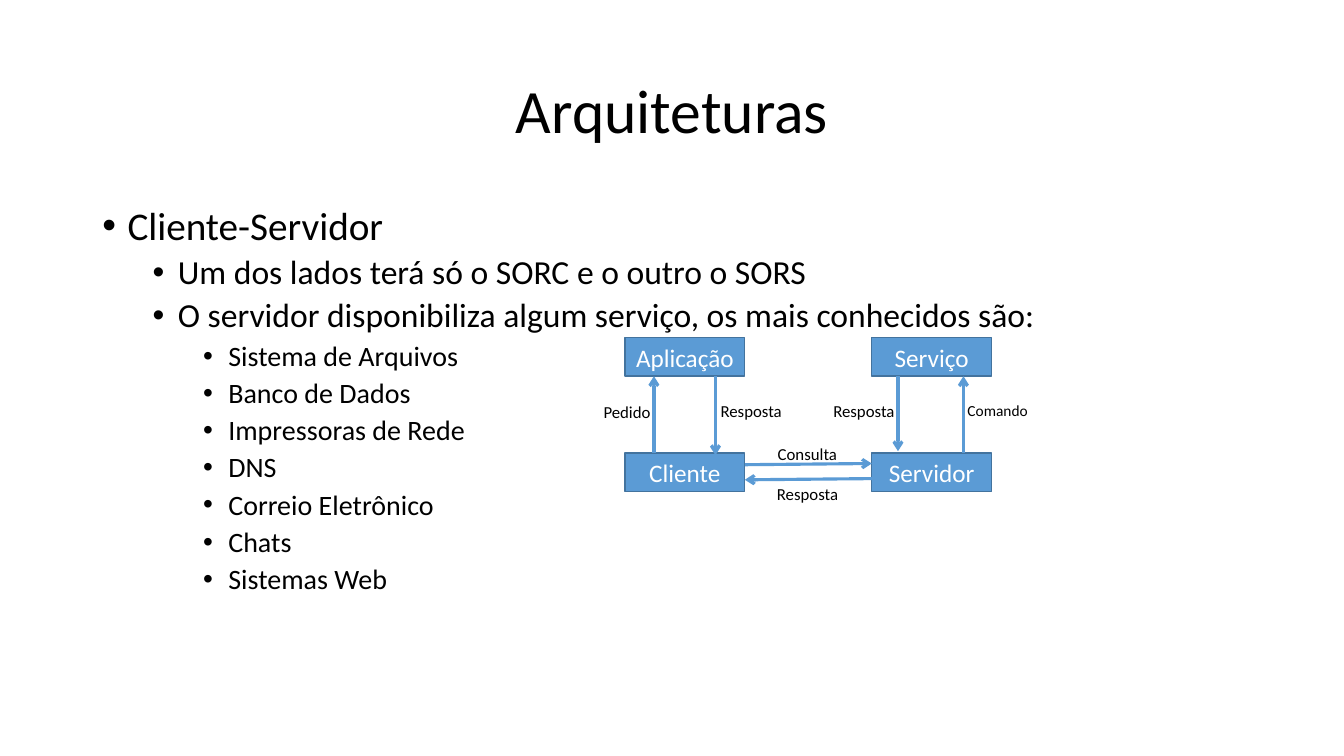
import pptx
import pptx.dml.color
import pptx.enum.shapes
import pptx.enum.text
import pptx.oxml.ns
import pptx.util
from lxml import etree

Cm = pptx.util.Cm
Pt = pptx.util.Pt
ALIGN = pptx.enum.text.PP_ALIGN
ANCHOR = pptx.enum.text.MSO_ANCHOR

COLORS = {"text": "000000", "box": "5B9BD5", "border": "43739E", "box_text": "FFFFFF"}
FONT = "Calibri"

LEVEL_SIZES = [28, 24, 20]
TOPICS = [
    (0, "Cliente-Servidor"),
    (1, "Um dos lados terá só o SORC e o outro o SORS"),
    (1, "O servidor disponibiliza algum serviço, os mais conhecidos são:"),
    (2, "Sistema de Arquivos"),
    (2, "Banco de Dados"),
    (2, "Impressoras de Rede"),
    (2, "DNS"),
    (2, "Correio Eletrônico"),
    (2, "Chats"),
    (2, "Sistemas Web"),
]

BOX_WIDTH, BOX_HEIGHT = 3.02, 0.97
CLIENT_LEFT, SERVER_LEFT = 15.75, 21.97
UPPER_TOP, LOWER_TOP = 8.51, 11.42
UPPER_BOTTOM = UPPER_TOP + BOX_HEIGHT
CLIENT_RIGHT = CLIENT_LEFT + BOX_WIDTH

BOXES = [
    ("Aplicação", CLIENT_LEFT, UPPER_TOP),
    ("Cliente", CLIENT_LEFT, LOWER_TOP),
    ("Servidor", SERVER_LEFT, LOWER_TOP),
    ("Serviço", SERVER_LEFT, UPPER_TOP),
]
ARROWS = [
    (16.48, LOWER_TOP, 16.48, UPPER_BOTTOM),
    (24.28, LOWER_TOP, 24.28, UPPER_BOTTOM),
    (SERVER_LEFT, 12.06, CLIENT_RIGHT, 12.09),
    (18.03, UPPER_BOTTOM, 18.03, LOWER_TOP + 0.05),
    (22.63, UPPER_BOTTOM, 22.63, LOWER_TOP - 0.05),
    (CLIENT_RIGHT, 11.71, SERVER_LEFT, 11.68),
]
LABELS = [
    ("Pedido", 14.96, 10.01, 1.7, 12),
    ("Resposta", 17.91, 9.98, 2.08, 12),
    ("Consulta", 19.35, 11.05, 2.03, 12),
    ("Resposta", 19.33, 12.07, 2.08, 12),
    ("Comando", 24.13, 9.98, 2.03, 11),
    ("Resposta", 20.75, 9.98, 2.08, 12),
]


def color(name):
    return pptx.dml.color.RGBColor.from_string(COLORS[name])


def add_run(paragraph, text, size, color_name="text"):
    run = paragraph.add_run()
    run.text = text
    run.font.name = FONT
    run.font.size = Pt(size)
    run.font.color.rgb = color(color_name)


def add_text_frame(slide, left, top, width, height, wrap=True):
    shape = slide.shapes.add_textbox(Cm(left), Cm(top), Cm(width), Cm(height))
    shape.text_frame.word_wrap = wrap
    return shape.text_frame


def add_title(slide, text):
    frame = add_text_frame(slide, 2.33, 1.01, 29.21, 3.68)
    frame.vertical_anchor = ANCHOR.MIDDLE
    paragraph = frame.paragraphs[0]
    paragraph.alignment = ALIGN.CENTER
    paragraph.line_spacing = 0.9
    add_run(paragraph, text, 44)


def add_bullet(paragraph, level):
    properties = paragraph._p.get_or_add_pPr()
    properties.set("marL", str(Cm(0.635 + 1.27 * level)))
    properties.set("indent", str(Cm(-0.635)))
    font = etree.SubElement(properties, pptx.oxml.ns.qn("a:buFont"))
    font.set("typeface", "Arial")
    bullet = etree.SubElement(properties, pptx.oxml.ns.qn("a:buChar"))
    bullet.set("char", "•")


def add_topics(slide, topics):
    frame = add_text_frame(slide, 2.33, 5.07, 29.21, 12.09)
    for index, (level, text) in enumerate(topics):
        paragraph = frame.add_paragraph() if index else frame.paragraphs[0]
        add_bullet(paragraph, level)
        paragraph.level = level
        paragraph.line_spacing = 0.9
        paragraph.space_before = Pt(5 if index else 0)
        add_run(paragraph, text, LEVEL_SIZES[level])


def add_box(slide, text, left, top):
    shape = slide.shapes.add_shape(
        pptx.enum.shapes.MSO_SHAPE.RECTANGLE,
        Cm(left), Cm(top), Cm(BOX_WIDTH), Cm(BOX_HEIGHT),
    )
    shape.shadow.inherit = False
    shape.fill.solid()
    shape.fill.fore_color.rgb = color("box")
    shape.line.color.rgb = color("border")
    shape.line.width = Pt(1)
    frame = shape.text_frame
    frame.word_wrap = False
    frame.vertical_anchor = ANCHOR.MIDDLE
    paragraph = frame.paragraphs[0]
    paragraph.alignment = ALIGN.CENTER
    add_run(paragraph, text, 18, "box_text")


def add_arrow(slide, *ends):
    connector = slide.shapes.add_connector(
        pptx.enum.shapes.MSO_CONNECTOR.STRAIGHT, *[Cm(end) for end in ends]
    )
    connector.line.color.rgb = color("box")
    connector.line.width = Pt(2.25)
    properties = connector._element.spPr
    line = properties.find(pptx.oxml.ns.qn("a:ln"))
    etree.SubElement(line, pptx.oxml.ns.qn("a:tailEnd")).set("type", "arrow")
    etree.SubElement(properties, pptx.oxml.ns.qn("a:effectLst"))


def add_label(slide, text, left, top, width, size):
    frame = add_text_frame(slide, left, top, width, 0.76, wrap=False)
    add_run(frame.paragraphs[0], text, size)


def main():
    presentation = pptx.Presentation()
    presentation.slide_width = Cm(33.87)
    presentation.slide_height = Cm(19.05)
    slide = presentation.slides.add_slide(presentation.slide_layouts[6])
    add_title(slide, "Arquiteturas")
    add_topics(slide, TOPICS)
    for box in BOXES:
        add_box(slide, *box)
    for arrow in ARROWS:
        add_arrow(slide, *arrow)
    for label in LABELS:
        add_label(slide, *label)
    presentation.save("out.pptx")


if __name__ == "__main__":
    main()
